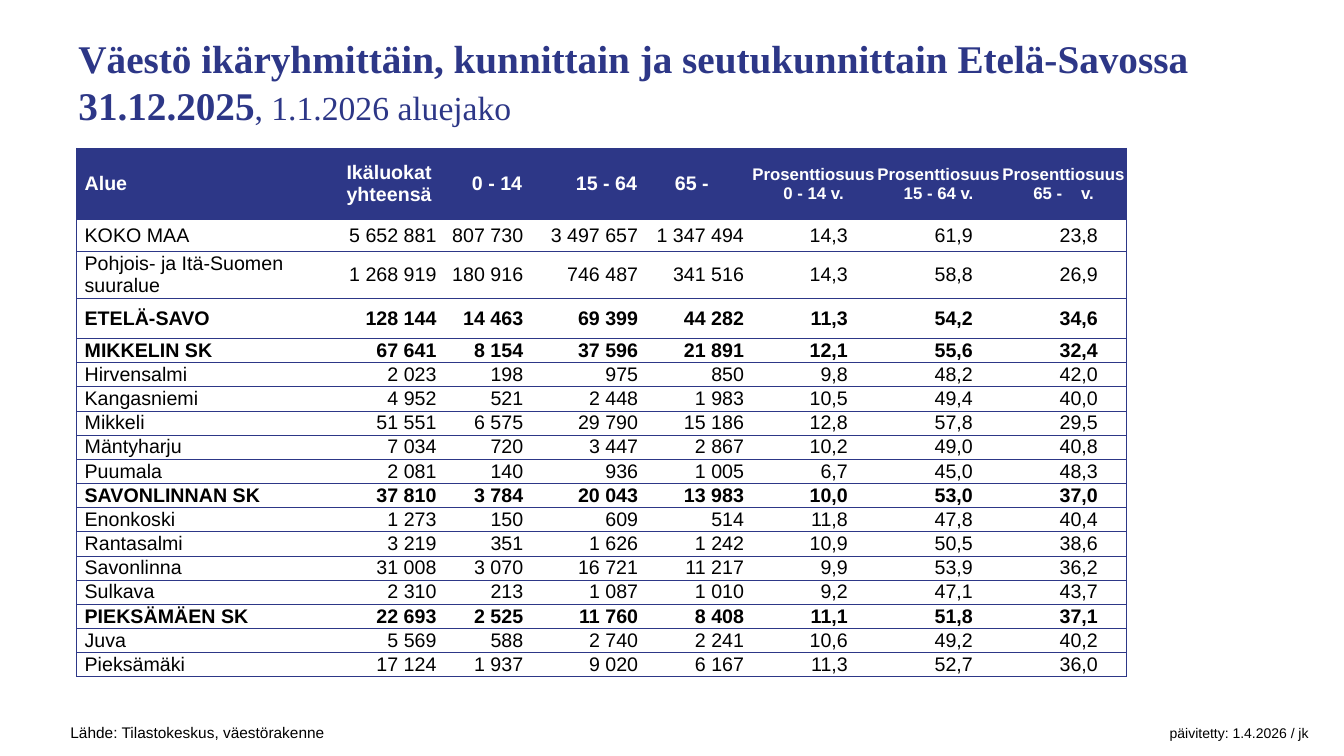
from lxml import etree
from pptx import Presentation
from pptx.dml.color import RGBColor
from pptx.enum.text import MSO_ANCHOR, PP_ALIGN
from pptx.oxml.ns import qn
from pptx.util import Inches, Pt

LEFT, CENTER, RIGHT = PP_ALIGN.LEFT, PP_ALIGN.CENTER, PP_ALIGN.RIGHT
MIDDLE, TOP = MSO_ANCHOR.MIDDLE, MSO_ANCHOR.TOP

THEME = {
    "navy": "2D3787", "white": "FFFFFF", "black": "000000",
    "serif": "Times New Roman", "sans": "Arial",
    "title": 28, "subtitle": 24, "body": 14, "share": 12, "source": 11, "updated": 10,
    "border": 0.5,
}

TITLE = "Väestö ikäryhmittäin, kunnittain ja seutukunnittain Etelä-Savossa 31.12.2025"
SUBTITLE = ", 1.1.2026 aluejako"
SOURCE = "Lähde: Tilastokeskus, väestörakenne"
UPDATED = "päivitetty: 1.4.2026 / jk"

HEADER = ["Alue", "Ikäluokat yhteensä", "0 - 14", "15 - 64", "65 -",
          "Prosenttiosuus 0 - 14 v.", "Prosenttiosuus 15 - 64 v.", "Prosenttiosuus 65 -"]
OPEN_AGE_UNIT = "v."
ROWS = [
    ("KOKO MAA", "5 652 881", "807 730", "3 497 657", "1 347 494", "14,3", "61,9", "23,8"),
    ("Pohjois- ja Itä-Suomen suuralue", "1 268 919", "180 916", "746 487", "341 516", "14,3", "58,8", "26,9"),
    ("ETELÄ-SAVO", "128 144", "14 463", "69 399", "44 282", "11,3", "54,2", "34,6"),
    ("MIKKELIN SK", "67 641", "8 154", "37 596", "21 891", "12,1", "55,6", "32,4"),
    ("Hirvensalmi", "2 023", "198", "975", "850", "9,8", "48,2", "42,0"),
    ("Kangasniemi", "4 952", "521", "2 448", "1 983", "10,5", "49,4", "40,0"),
    ("Mikkeli", "51 551", "6 575", "29 790", "15 186", "12,8", "57,8", "29,5"),
    ("Mäntyharju", "7 034", "720", "3 447", "2 867", "10,2", "49,0", "40,8"),
    ("Puumala", "2 081", "140", "936", "1 005", "6,7", "45,0", "48,3"),
    ("SAVONLINNAN SK", "37 810", "3 784", "20 043", "13 983", "10,0", "53,0", "37,0"),
    ("Enonkoski", "1 273", "150", "609", "514", "11,8", "47,8", "40,4"),
    ("Rantasalmi", "3 219", "351", "1 626", "1 242", "10,9", "50,5", "38,6"),
    ("Savonlinna", "31 008", "3 070", "16 721", "11 217", "9,9", "53,9", "36,2"),
    ("Sulkava", "2 310", "213", "1 087", "1 010", "9,2", "47,1", "43,7"),
    ("PIEKSÄMÄEN SK", "22 693", "2 525", "11 760", "8 408", "11,1", "51,8", "37,1"),
    ("Juva", "5 569", "588", "2 740", "2 241", "10,6", "49,2", "40,2"),
    ("Pieksämäki", "17 124", "1 937", "9 020", "6 167", "11,3", "52,7", "36,0"),
]
BOLD_AREAS = {"ETELÄ-SAVO", "MIKKELIN SK", "SAVONLINNAN SK", "PIEKSÄMÄEN SK"}

COL_WIDTHS = [2.56, 1.08, 0.86, 1.14, 1.05] + [1.24] * 3
ROW_HEIGHTS = [0.71, 0.31, 0.39, 0.4] + [0.24] * 14
FIRST_SHARE = 5
HEADER_ALIGN = [LEFT, CENTER, RIGHT, RIGHT, RIGHT] + [CENTER] * 3
HEADER_INSET = [0, 0, 0.08, 0.08, 0.42, 0, 0, 0]
BODY_INSET = [0] + [0.07] * 4 + [0.28] * 3


def add_run(p, text, size, color, face="sans", bold=False):
    r = p.add_run()
    r.text = text
    formats = {"size": Pt(THEME[size]), "name": THEME[face], "bold": bold}
    for name, value in formats.items():
        setattr(r.font, name, value)
    r.font.color.rgb = RGBColor.from_string(THEME[color])
    return r


def add_text_box(s, left, top, width, height, anchor):
    tf = s.shapes.add_textbox(*map(Inches, (left, top, width, height))).text_frame
    tf.word_wrap = True
    tf.vertical_anchor = anchor
    return tf.paragraphs[0]


def set_borders(cell, col):
    """Rule every row; draw vertical lines only at the table's outer edges."""
    visible = {"lnL": col == 0, "lnR": col == len(COL_WIDTHS) - 1, "lnT": True, "lnB": True}
    tc_pr = cell._tc.get_or_add_tcPr()
    for i, (tag, shown) in enumerate(visible.items()):
        ln = etree.Element(qn("a:" + tag), w=str(Pt(THEME["border"])))
        if shown:
            fill = etree.SubElement(ln, qn("a:solidFill"))
            etree.SubElement(fill, qn("a:srgbClr"), val=THEME["navy"])
        else:
            etree.SubElement(ln, qn("a:noFill"))
        tc_pr.insert(i, ln)


def format_cell(cell, col, right_inset, align):
    formats = {"margin_left": Inches(0 if col else 0.08), "margin_right": Inches(right_inset),
               "margin_top": 0, "margin_bottom": 0, "vertical_anchor": MIDDLE}
    for name, value in formats.items():
        setattr(cell, name, value)
    p = cell.text_frame.paragraphs[0]
    p.alignment = align
    return p


def fill_cell(cell, color):
    cell.fill.solid()
    cell.fill.fore_color.rgb = RGBColor.from_string(THEME[color])


def add_population_table(s):
    frame = s.shapes.add_table(len(ROW_HEIGHTS), len(COL_WIDTHS), Inches(0.76), Inches(1.47),
                               Inches(sum(COL_WIDTHS)), Inches(sum(ROW_HEIGHTS)))
    table = frame.table
    table.first_row = table.horz_banding = False
    for column, width in zip(table.columns, COL_WIDTHS):
        column.width = Inches(width)
    for row, height in zip(table.rows, ROW_HEIGHTS):
        row.height = Inches(height)

    for i, values in enumerate([HEADER] + ROWS):
        is_header = i == 0
        insets = HEADER_INSET if is_header else BODY_INSET
        bold = is_header or values[0] in BOLD_AREAS
        color = "white" if is_header else "black"
        for col, text in enumerate(values):
            cell = table.cell(i, col)
            align = HEADER_ALIGN[col] if is_header else (RIGHT if col else LEFT)
            p = format_cell(cell, col, insets[col], align)
            size = "share" if is_header and col >= FIRST_SHARE else "body"
            add_run(p, text, size, color, bold=bold)
            fill_cell(cell, "navy" if is_header else "white")
            set_borders(cell, col)

    # The open-ended age group has a wide gap before its unit
    p = table.cell(0, len(HEADER) - 1).text_frame.paragraphs[0]
    gap = add_run(p, " ", "share", "white", bold=True)
    gap.font._element.set("spc", "1000")
    add_run(p, OPEN_AGE_UNIT, "share", "white", bold=True)


def add_footer(s):
    p = add_text_box(s, 0.6, 7.12, 12.6, 0.33, TOP)
    tabs = etree.SubElement(p._p.get_or_add_pPr(), qn("a:tabLst"))
    etree.SubElement(tabs, qn("a:tab"), pos=str(Inches(12.28)), algn="r")
    add_run(p, SOURCE + "\t", "source", "black")
    add_run(p, UPDATED, "updated", "black")


def main():
    prs = Presentation()
    prs.slide_width, prs.slide_height = Inches(13.33), Inches(7.5)
    s = prs.slides.add_slide(prs.slide_layouts[6])
    p = add_text_box(s, 0.68, 0.36, 11.73, 0.89, MIDDLE)
    add_run(p, TITLE, "title", "navy", "serif", True)
    add_run(p, SUBTITLE, "subtitle", "navy", "serif")
    add_population_table(s)
    add_footer(s)
    prs.save("out.pptx")


if __name__ == "__main__":
    main()
